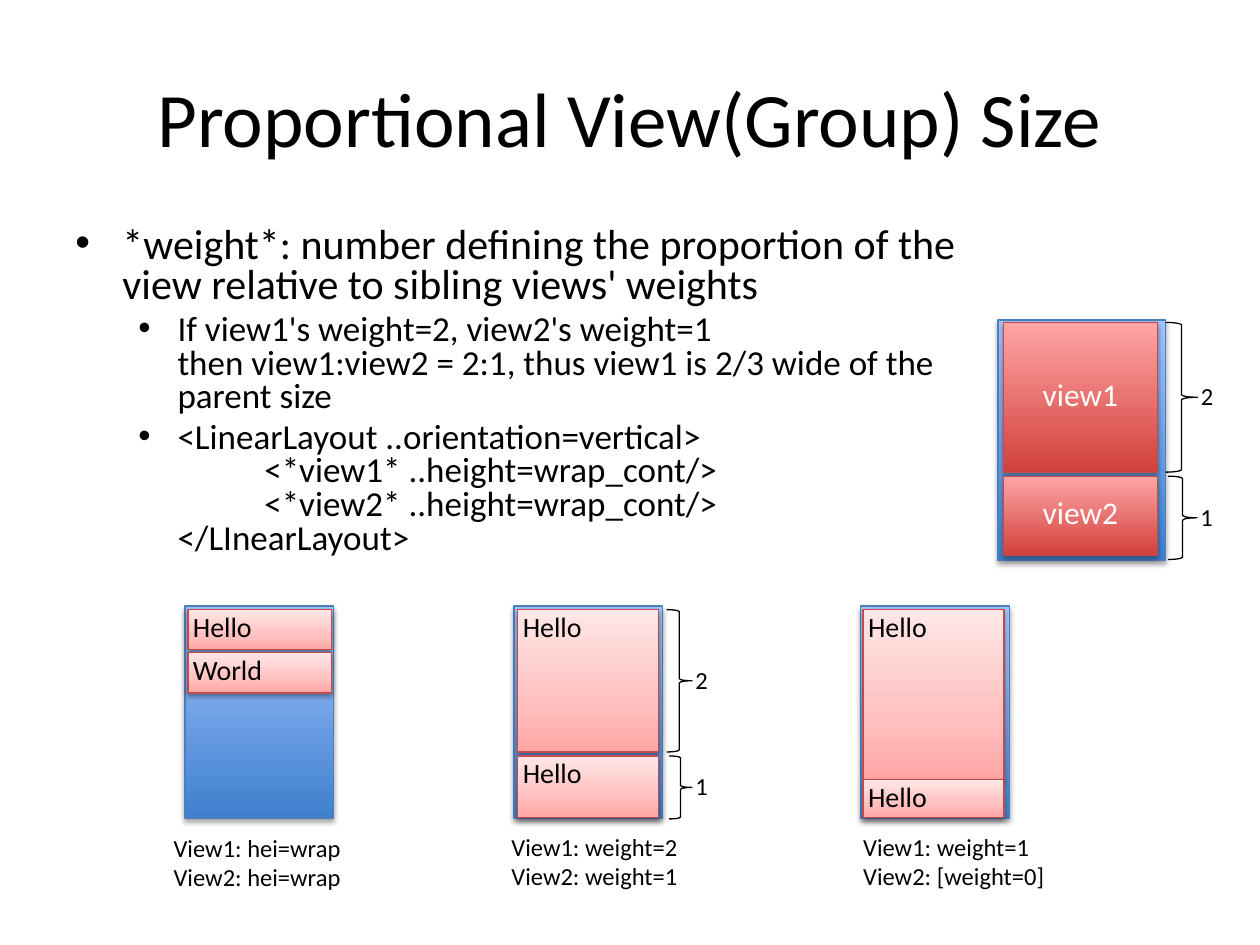
from lxml import etree
from pptx import Presentation, util as u
from pptx.dml.color import RGBColor
from pptx.enum import shapes, text
from pptx.oxml import ns

Cm, Pt = u.Cm, u.Pt
BLACK = RGBColor(0, 0, 0)
WHITE = RGBColor(255, 255, 255)
BLUE_LINE = RGBColor(0x4B, 0x7E, 0xBC)
RED_LINE = RGBColor(0xBF, 0x4C, 0x48)
BLUE = [(0, RGBColor(0x3F, 0x80, 0xCE)), (100, RGBColor(0xA4, 0xC4, 0xFF))]
RED = [(0, RGBColor(0xD1, 0x40, 0x3C)), (100, RGBColor(0xFF, 0xA6, 0xA5))]
PINK = [(0, RGBColor(0xFF, 0xA6, 0xA5)), (35, RGBColor(0xFF, 0xC0, 0xBF)),
        (100, RGBColor(0xFF, 0xE7, 0xE7))]

TITLE = "Proportional View(Group) Size"
BODY = [
    (0, "*weight*: number defining the proportion of the view relative to sibling views' weights"),
    (1, "If view1's weight=2, view2's weight=1\n"
        "then view1:view2 = 2:1, thus view1 is 2/3 wide of the parent size"),
    (1, "<LinearLayout ..orientation=vertical>\n"
        "\t\t<*view1* ..height=wrap_cont/>\n"
        "\t\t<*view2* ..height=wrap_cont/>\n"
        "</LInearLayout>"),
]
LEVELS = [
    {"size": 24, "left": 0.95, "hang": 0.95, "before": 4.8},
    {"size": 20, "left": 2.06, "hang": 0.79, "before": 4},
]

PALE = {"stops": PINK, "shade": 38, "dist": 1.6, "size": 16, "color": BLACK,
        "align": text.PP_ALIGN.LEFT, "anchor": text.MSO_ANCHOR.TOP, "inset": 0.1}
STRONG = {"stops": RED, "shade": 35, "dist": 1.8, "size": 18, "color": WHITE,
          "align": text.PP_ALIGN.CENTER, "anchor": text.MSO_ANCHOR.MIDDLE, "inset": 0}
SMALL = (3, 4.27)
PANELS = [
    {"at": (3.73, 12.22), "size": SMALL, "look": PALE, "inner": (3.79, 2.9),
     "views": [("Hello", 12.29, 0.81), ("World", 13.16, 0.81)]},
    {"at": (10.36, 12.22), "size": SMALL, "look": PALE, "inner": (10.44, 2.84),
     "views": [("Hello", 12.29, 2.87), ("Hello", 15.24, 1.24)]},
    {"at": (17.35, 12.22), "size": SMALL, "look": PALE, "inner": (17.4, 2.84),
     "views": [("Hello", 12.29, 3.43), ("Hello", 15.72, 0.76)]},
    {"at": (20.12, 6.45), "size": (3.38, 4.85), "look": STRONG, "inner": (20.23, 3.1),
     "views": [("view1", 6.5, 3.02), ("view2", 9.6, 1.6)]},
]
BRACES = [
    ("2", 23.5, 6.5, 0.64, 3.02),
    ("1", 23.55, 9.6, 0.58, 1.68),
    ("2", 13.44, 12.29, 0.51, 2.87),
    ("1", 13.49, 15.24, 0.46, 1.27),
]
CAPTIONS = [
    (3.25, 16.66, 3.91, ["View1: hei=wrap", "View2: hei=wrap"]),
    (10.06, 16.64, 3.89, ["View1: weight=2", "View2: weight=1"]),
    (17.15, 16.64, 4.22, ["View1: weight=1", "View2: [weight=0]"]),
]


def add_xml(parent, tag, **attrs):
    return etree.SubElement(parent, ns.qn(tag), {k: str(v) for k, v in attrs.items()})


def set_all(obj, values):
    for name, value in values.items():
        setattr(obj, name, value)


def write(p, words, size, color=BLACK, **para):
    p.text = words
    set_all(p, para)
    for r in p.runs:
        set_all(r.font, {"size": Pt(size), "name": "Calibri"})
        r.font.color.rgb = color


def add_box(s, x, y, w, h, **frame):
    tf = s.shapes.add_textbox(Cm(x), Cm(y), Cm(w), Cm(h)).text_frame
    set_all(tf, frame)
    return tf


def add_note(s, x, y, w, h, lines):
    tf = add_box(s, x, y, w, h, word_wrap=False,
                 auto_size=text.MSO_AUTO_SIZE.SHAPE_TO_FIT_TEXT)
    for i, line in enumerate(lines):
        write(tf.add_paragraph() if i else tf.paragraphs[0], line, 14)


def add_preset(s, kind, x, y, w, h, line):
    sp = s.shapes.add_shape(kind, Cm(x), Cm(y), Cm(w), Cm(h))
    sp.shadow.inherit = False
    sp.line.color.rgb = line
    sp.line.width = Pt(0.75)
    return sp


def add_block(s, x, y, w, h, line, stops, shade, dist):
    sp = add_preset(s, shapes.MSO_SHAPE.RECTANGLE, x, y, w, h, line)
    sp.fill.gradient()
    sp.fill.gradient_angle = 90
    props = sp._element.spPr
    gs_list = props.find(".//" + ns.qn("a:gsLst"))
    for gs in list(gs_list):
        gs_list.remove(gs)
    for pos, color in stops:
        add_xml(add_xml(gs_list, "a:gs", pos=pos * 1000), "a:srgbClr", val=color)
    shadow = add_xml(props.find(ns.qn("a:effectLst")), "a:outerShdw", blurRad=Pt(3.1),
                     dist=Pt(dist), dir=5400000, rotWithShape=0)
    add_xml(add_xml(shadow, "a:srgbClr", val=BLACK), "a:alpha", val=shade * 1000)
    return sp


def add_panel(s, panel):
    look = panel["look"]
    add_block(s, *panel["at"], *panel["size"], BLUE_LINE, BLUE, 35, 1.8)
    x, w = panel["inner"]
    for words, y, h in panel["views"]:
        sp = add_block(s, x, y, w, h, RED_LINE, look["stops"], look["shade"], look["dist"])
        tf = sp.text_frame
        set_all(tf, {"word_wrap": True, "vertical_anchor": look["anchor"],
                     "margin_left": Cm(look["inset"]), "margin_right": 0})
        write(tf.paragraphs[0], words, look["size"], look["color"],
              alignment=look["align"], line_spacing=0.8)


def add_brace(s, words, x, y, w, h):
    sp = add_preset(s, shapes.MSO_SHAPE.RIGHT_BRACE, x, y, w, h, BLACK)
    sp.fill.background()
    add_note(s, x + w - 0.18, y + h / 2 - 0.45, 0.76, 0.86, [words])


def add_bullets(s):
    tf = add_box(s, 1.27, 4.45, 18.42, 12.57, word_wrap=True)
    for i, (level, words) in enumerate(BODY):
        look = LEVELS[level]
        p = tf.add_paragraph() if i else tf.paragraphs[0]
        write(p, words, look["size"], level=level, line_spacing=0.8,
              space_before=Pt(look["before"]))
        props = p._p.get_or_add_pPr()
        for name, value in {"marL": look["left"], "indent": -look["hang"],
                            "defTabSz": 1.27}.items():
            props.set(name, str(Cm(value)))
        add_xml(props, "a:buFont", typeface="Arial")
        add_xml(props, "a:buChar", char="•")


def main():
    prs = Presentation()
    prs.slide_width, prs.slide_height = Cm(25.4), Cm(19.05)
    s = prs.slides.add_slide(prs.slide_layouts[6])
    tf = add_box(s, 1.27, 0.76, 22.86, 3.18, word_wrap=True,
                 vertical_anchor=text.MSO_ANCHOR.MIDDLE)
    write(tf.paragraphs[0], TITLE, 44, alignment=text.PP_ALIGN.CENTER)
    add_bullets(s)
    for panel in PANELS:
        add_panel(s, panel)
    for brace in BRACES:
        add_brace(s, *brace)
    for x, y, w, lines in CAPTIONS:
        add_note(s, x, y, w, 1.45, lines)
    prs.save("out.pptx")


if __name__ == "__main__":
    main()
